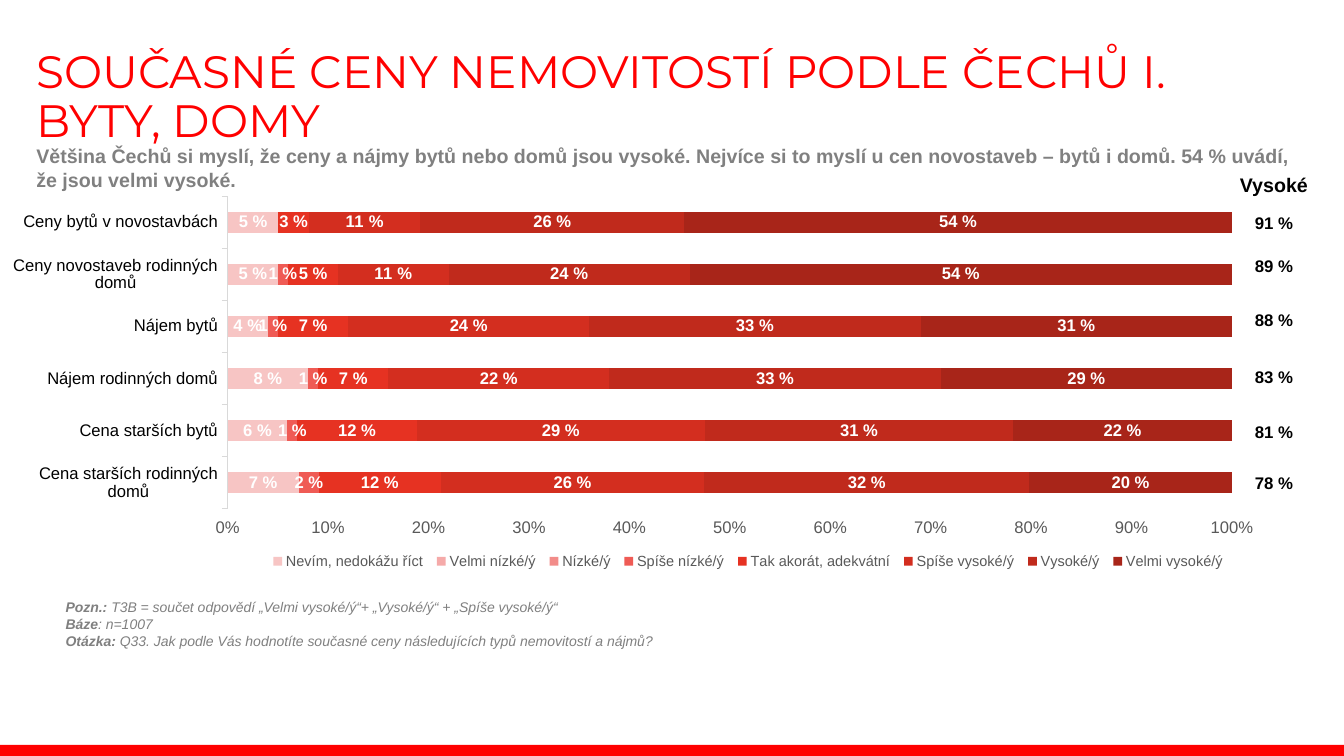
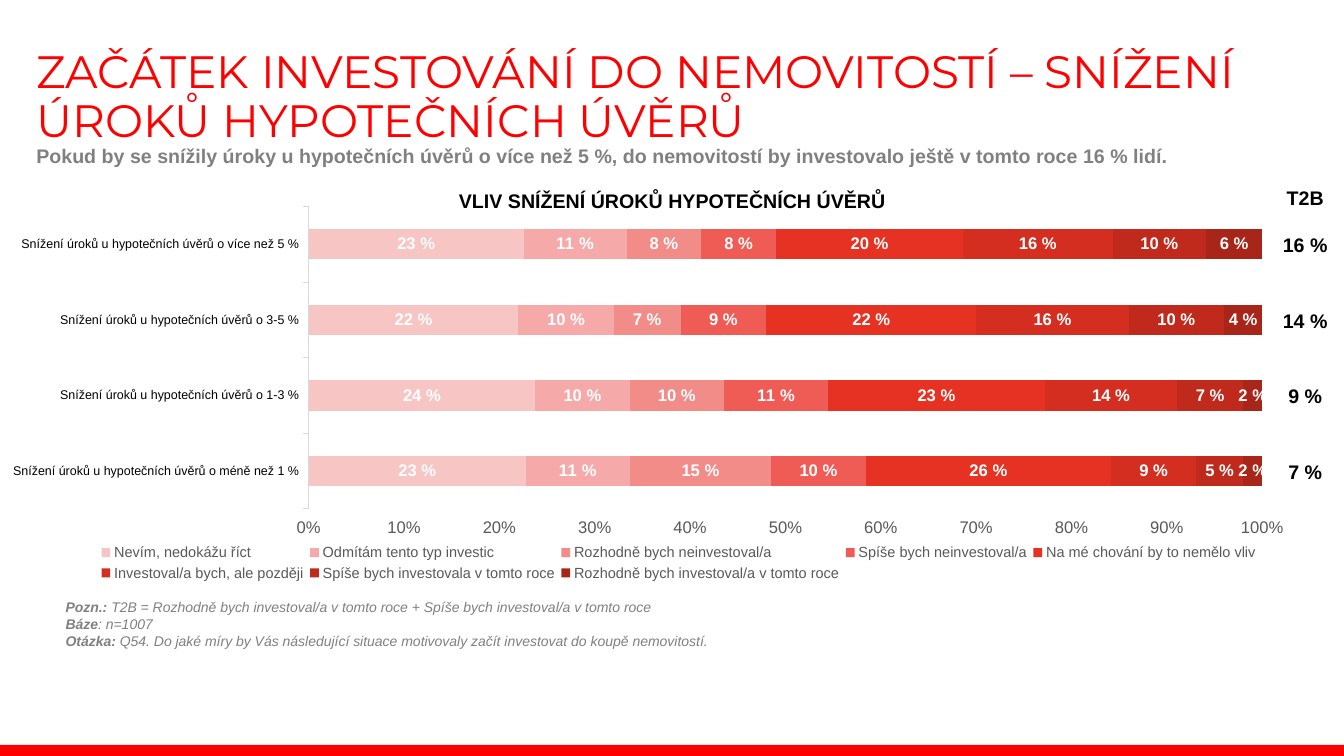
from lxml.etree import SubElement
from pptx import Presentation
from pptx.chart.data import CategoryChartData
from pptx.dml.color import RGBColor
from pptx.enum.chart import XL_CHART_TYPE as ChartType, XL_LEGEND_POSITION as LegendPosition
from pptx.enum.chart import XL_TICK_MARK as TickMark
from pptx.enum.shapes import MSO_SHAPE as Shape
from pptx.enum.text import MSO_ANCHOR as Anchor, MSO_AUTO_SIZE as AutoSize, PP_ALIGN as Align
from pptx.oxml.ns import qn
from pptx.util import Inches, Pt

RED, GREY, DARK_GREY, BLACK, WHITE = "FF0000", "808080", "595959", "000000", "FFFFFF"
AXIS_GREY = "D9D9D9"
SCALE = ["F7C5C4", "F5AAA9", "F28C89", "EF5B55", "E63222", "D32E1F", "C02A1C", "A82519"]
PERCENT = '#,##0" %";\\-#,##0;'
PLAIN_TABLE = "{2D5ABB26-0587-4C30-8999-92F81FD0307C}"


def color(value):
    """Turn a hex string into a colour."""
    return RGBColor.from_string(value)


def set_font(font, size, shade, bold=False, italic=False, name="Arial"):
    """Format a font."""
    font.name, font.size, font.bold, font.italic = name, Pt(size), bold, italic
    font.color.rgb = color(shade)


def set_layout(parent, successors, left, top, width, height, inner=False):
    """Give a plot area or legend a fixed place, in fractions of the chart."""
    for old in parent.findall(qn("c:layout")):
        parent.remove(old)
    layout = SubElement(parent, qn("c:layout"))
    manual = SubElement(layout, qn("c:manualLayout"))
    settings = [("layoutTarget", "inner")] if inner else []
    settings += [("xMode", "edge"), ("yMode", "edge"),
                 ("x", left), ("y", top), ("w", width), ("h", height)]
    for tag, value in settings:
        SubElement(manual, qn(f"c:{tag}")).set("val", str(value))
    following = [child for child in parent if child.tag in map(qn, successors)]
    following[0].addprevious(layout)


class Report:
    """Holds the deck, its style and the current page."""

    def __init__(self):
        """Start an empty wide deck."""
        self.deck = Presentation()
        self.deck.slide_width, self.deck.slide_height = Inches(13.33), Inches(7.5)
        self.page = None

    def add_page(self, title, lead):
        """Add a page with its title, lead text and bottom band."""
        self.page = self.deck.slides.add_slide(self.deck.slide_layouts[1])
        band = self.page.shapes.add_shape(
            Shape.RECTANGLE, 0, Inches(7.39), Inches(13.33), Inches(0.11))
        band.shadow.inherit = False
        band.fill.solid()
        band.fill.fore_color.rgb = color(RED)
        band.line.fill.background()
        heading, body = self.page.placeholders
        para = self.fill_placeholder(heading, 0.44, 0.53, title)
        para.line_spacing = 0.9
        set_font(para.font, 32.4, RED, name="Montserrat")
        para = self.fill_placeholder(body, 1.38, 0.7, lead)
        properties = para._p.get_or_add_pPr()
        properties.set("marL", "0")
        properties.set("indent", "0")
        SubElement(properties, qn("a:buNone"))
        set_font(para.font, 14, GREY, bold=True)

    def fill_placeholder(self, holder, top, height, text):
        """Place a placeholder and return its one paragraph."""
        holder.left, holder.top = Inches(0.26), Inches(top)
        holder.width, holder.height = Inches(12.69), Inches(height)
        frame = holder.text_frame
        frame.text = text
        frame.auto_size, frame.vertical_anchor = AutoSize.NONE, Anchor.TOP
        para = frame.paragraphs[0]
        para.alignment, para.space_before = Align.LEFT, Pt(0)
        return para

    def add_box(self, left, top, width, height):
        """Add a wrapping text box and return its frame."""
        box = self.page.shapes.add_textbox(*map(Inches, (left, top, width, height)))
        box.text_frame.word_wrap = True
        return box.text_frame

    def add_caption(self, text, left, top, width, height):
        """Add a bold centred caption."""
        frame = self.add_box(left, top, width, height)
        frame.vertical_anchor = Anchor.MIDDLE
        frame.text = text
        para = frame.paragraphs[0]
        para.alignment = Align.CENTER
        set_font(para.font, 14, BLACK, bold=True)

    def add_notes(self, note, question):
        """Add the remark, sample size and question below the chart."""
        frame = self.add_box(0.65, 5.94, 11.58, 0.5)
        frame.margin_left = frame.margin_right = frame.margin_top = frame.margin_bottom = 0
        lines = [("Pozn.: ", note), ("Báze", ": n=1007"), ("Otázka: ", question)]
        for index, (label, text) in enumerate(lines):
            para = frame.add_paragraph() if index else frame.paragraphs[0]
            set_font(para.font, 10, GREY, italic=True)
            for words, bold in ((label, True), (text, False)):
                span = para.add_run()
                span.text, span.font.bold = words, bold

    def add_bars(self, place, categories, series, category_size, plot_area, legend_area):
        """Add a 100 % stacked bar chart."""
        data = CategoryChartData()
        data.categories = categories
        for name, values in series:
            data.add_series(name, values)
        chart = self.page.shapes.add_chart(
            ChartType.BAR_STACKED_100, *map(Inches, place), data).chart
        chart.has_title = False
        set_font(chart.font, 10, BLACK)
        self.style_axes(chart, category_size)
        plot = chart.plots[0]
        plot.gap_width, plot.overlap, plot.vary_by_categories = 150, 100, False
        for bars, shade in zip(plot.series, SCALE):
            bars.format.fill.solid()
            bars.format.fill.fore_color.rgb = color(shade)
            if any(bars.values):
                labels = bars.data_labels
                labels.show_value = True
                labels.number_format, labels.number_format_is_linked = PERCENT, False
                set_font(labels.font, 12, WHITE, bold=True)
        chart.has_legend = True
        legend = chart.legend
        legend.position, legend.include_in_layout = LegendPosition.BOTTOM, False
        set_font(legend.font, 10.5, DARK_GREY)
        set_layout(legend._element, ["c:overlay"], *legend_area)
        set_layout(chart._chartSpace.chart.plotArea, ["c:barChart"], *plot_area, inner=True)

    def style_axes(self, chart, category_size):
        """Format both axes of a chart."""
        axis = chart.category_axis
        axis.major_tick_mark = TickMark.OUTSIDE
        axis.format.line.color.rgb = color(AXIS_GREY)
        axis.format.line.width = Pt(0.75)
        set_font(axis.tick_labels.font, category_size, BLACK)
        axis = chart.value_axis
        axis.has_major_gridlines = False
        axis.major_tick_mark = TickMark.OUTSIDE
        axis.format.line.fill.background()
        axis.tick_labels.number_format = "0%"
        axis.tick_labels.number_format_is_linked = False
        set_font(axis.tick_labels.font, 12, DARK_GREY)

    def add_totals(self, left, top, width, heights, texts, size, tight=False):
        """Add the one-column table of totals beside the bars."""
        table = self.page.shapes.add_table(
            len(texts), 1, *map(Inches, (left, top, width, sum(heights)))).table
        table.first_row = table.horz_banding = False
        table._tbl.tblPr.find(qn("a:tableStyleId")).text = PLAIN_TABLE
        for index, (height, text) in enumerate(zip(heights, texts)):
            table.rows[index].height = Inches(height)
            cell = table.cell(index, 0)
            cell.fill.background()
            cell.text = text
            if tight and index:
                cell.vertical_anchor = Anchor.MIDDLE
                cell.margin_left = cell.margin_right = cell.margin_top = Inches(0.01)
                cell.margin_bottom = 0
            para = cell.text_frame.paragraphs[0]
            para.alignment = Align.CENTER
            set_font(para.font, size if index else 14, BLACK, bold=True)


def add_prices(report):
    """Build the page on current property prices."""
    report.add_page(
        "SOUČASNÉ CENY NEMOVITOSTÍ PODLE ČECHŮ I. BYTY, DOMY",
        "Většina Čechů si myslí, že ceny a nájmy bytů nebo domů jsou vysoké. Nejvíce si to "
        "myslí u cen novostaveb – bytů i domů. 54 % uvádí, že jsou velmi vysoké.")
    report.add_bars(
        (0.13, 1.94, 12.3, 3.88),
        ["Cena starších rodinných domů", "Cena starších bytů", "Nájem rodinných domů",
         "Nájem bytů", "Ceny novostaveb rodinných domů", "Ceny bytů v novostavbách"],
        [("Nevím, nedokážu říct", (7, 6, 8, 4, 5, 5)),
         ("Velmi nízké/ý", (0,) * 6),
         ("Nízké/ý", (0,) * 6),
         ("Spíše nízké/ý", (2, 1, 1, 1, 1, 0)),
         ("Tak akorát, adekvátní", (12, 12, 7, 7, 5, 3)),
         ("Spíše vysoké/ý", (26, 29, 22, 24, 11, 11)),
         ("Vysoké/ý", (32, 31, 33, 33, 24, 26)),
         ("Velmi vysoké/ý", (20, 22, 29, 31, 54, 54))],
        12, (0.17, 0, 0.82, 0.8), (0.2, 0.9, 0.79, 0.07))
    report.add_notes(
        "T3B = součet odpovědí „Velmi vysoké/ý“+ „Vysoké/ý“ + „Spíše vysoké/ý“",
        "Q33. Jak podle Vás hodnotíte současné ceny následujících typů nemovitostí a nájmů?")
    report.add_totals(
        12.14, 1.68, 0.99, [0.34, 0.38, 0.49, 0.57, 0.56, 0.53, 0.49],
        ["Vysoké", "91 %", "89 %", "88 %", "83 %", "81 %", "78 %"], 12, tight=True)


def add_mortgages(report):
    """Build the page on lower mortgage rates."""
    report.add_page(
        "ZAČÁTEK INVESTOVÁNÍ DO NEMOVITOSTÍ – SNÍŽENÍ ÚROKŮ HYPOTEČNÍCH ÚVĚRŮ",
        "Pokud by se snížily úroky u hypotečních úvěrů o více než 5 %, do nemovitostí by "
        "investovalo ještě v tomto roce 16 % lidí.")
    changes = ["méně než 1 %", "1-3 %", "3-5 %", "více než 5 %"]
    report.add_bars(
        (0.13, 1.89, 12.6, 3.95),
        [f"Snížení úroků u hypotečních úvěrů o {change}" for change in changes],
        [("Nevím, nedokážu říct", (23, 24, 22, 23)),
         ("Odmítám tento typ investic", (11, 10, 10, 11)),
         ("Rozhodně bych neinvestoval/a", (15, 10, 7, 8)),
         ("Spíše bych neinvestoval/a", (10, 11, 9, 8)),
         ("Na mé chování by to nemělo vliv", (26, 23, 22, 20)),
         ("Investoval/a bych, ale později", (9, 14, 16, 16)),
         ("Spíše bych investovala v tomto roce", (5, 7, 10, 10)),
         ("Rozhodně bych investoval/a v tomto roce", (2, 2, 4, 6))],
        9, (0.23, 0.04, 0.76, 0.76), (0.06, 0.88, 0.93, 0.11))
    report.add_caption("VLIV SNÍŽENÍ ÚROKŮ HYPOTEČNÍCH ÚVĚRŮ", 4.19, 1.81, 4.96, 0.37)
    report.add_notes(
        "T2B = Rozhodně bych investoval/a v tomto roce + Spíše bych investoval/a v tomto roce",
        "Q54. Do jaké míry by Vás následující situace motivovaly začít investovat do koupě "
        "nemovitostí.")
    report.add_totals(
        12.57, 1.81, 0.75, [0.47] + [0.75] * 4, ["T2B", "16 %", "14 %", "9 %", "7 %"], 14)


def main():
    """Build and save the deck."""
    report = Report()
    add_prices(report)
    add_mortgages(report)
    report.deck.save("out.pptx")


if __name__ == "__main__":
    main()
